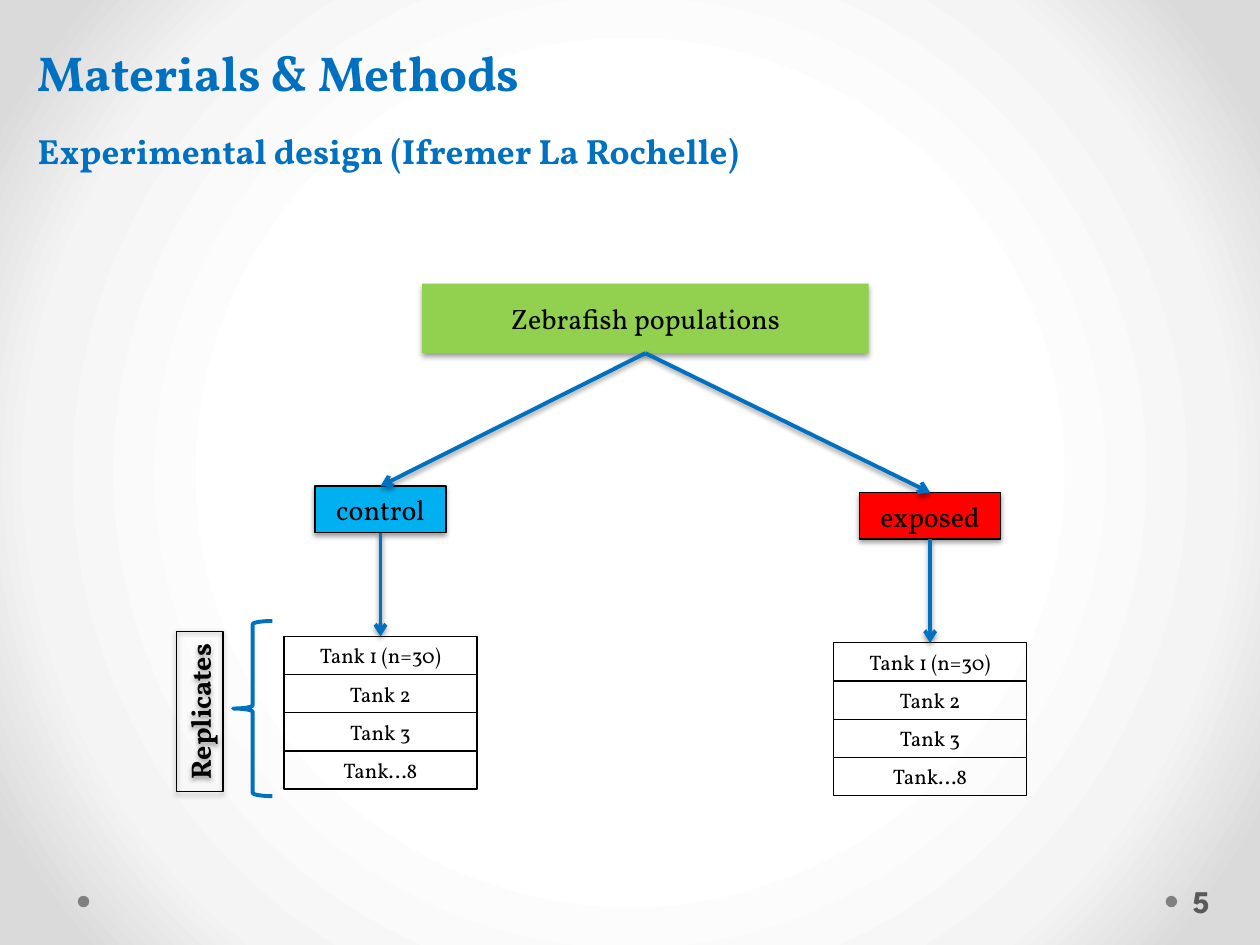
from lxml.etree import SubElement
from pptx import Presentation
from pptx.dml.color import RGBColor
from pptx.enum.shapes import MSO_CONNECTOR, MSO_SHAPE
from pptx.enum.text import MSO_ANCHOR, PP_ALIGN
from pptx.oxml import parse_xml
from pptx.oxml.ns import nsdecls, qn
from pptx.util import Cm, Pt

BLUE = "0070C0"
BLACK = "000000"


def color(hex_string):
    return RGBColor.from_string(hex_string)


def write(shape, text, size=16, font="Vollkorn", ink=BLACK, bold=False,
          align=PP_ALIGN.CENTER, anchor=MSO_ANCHOR.MIDDLE):
    frame = shape.text_frame
    frame.word_wrap = True
    frame.vertical_anchor = anchor
    paragraph = frame.paragraphs[0]
    paragraph.alignment = align
    run = paragraph.add_run()
    run.text = text
    run.font.name = font
    run.font.size = Pt(size)
    run.font.bold = bold
    run.font.color.rgb = color(ink)


class Diagram:
    """Draws styled elements on one slide; all lengths are centimetres."""

    def __init__(self, slide):
        self.slide = slide
        self.line_color = BLUE
        self.line_width = Pt(2.25)
        self.border_width = Pt(0.75)

    def background(self, stops):
        marks = "".join(
            f'<a:gs pos="{position * 1000}"><a:srgbClr val="{tone}"/></a:gs>'
            for position, tone in stops)
        gradient = parse_xml(
            f'<a:gradFill {nsdecls("a")} rotWithShape="1"><a:gsLst>{marks}</a:gsLst>'
            '<a:path path="circle"><a:fillToRect l="50000" t="50000" r="50000" b="50000"/>'
            '</a:path></a:gradFill>')
        self.slide.background.fill.solid()
        properties = self.slide.element.find(".//" + qn("p:bgPr"))
        properties.replace(properties[0], gradient)

    def shadow(self, effects):
        outer = SubElement(effects, qn("a:outerShdw"), blurRad=str(Pt(3.1)),
                           dist=str(Pt(1.6)), dir="5400000", rotWithShape="0")
        tone = SubElement(outer, qn("a:srgbClr"), val=BLACK)
        SubElement(tone, qn("a:alpha"), val="38000")

    def shape(self, kind, left, top, width, height, fill=None, line=None,
              line_width=None, shadow=False):
        shape = self.slide.shapes.add_shape(
            kind, Cm(left), Cm(top), Cm(width), Cm(height))
        if fill:
            shape.fill.solid()
            shape.fill.fore_color.rgb = color(fill)
        else:
            shape.fill.background()
        if line:
            shape.line.color.rgb = color(line)
            shape.line.width = line_width or self.border_width
        else:
            shape.line.fill.background()
        shape.shadow.inherit = False
        if shadow:
            self.shadow(shape.element.spPr.find(qn("a:effectLst")))
        return shape

    def box(self, text, left, top, width, height, fill=None, line=BLACK,
            shadow=True, **text_format):
        shape = self.shape(MSO_SHAPE.RECTANGLE, left, top, width, height,
                           fill, line, shadow=shadow)
        write(shape, text, **text_format)
        return shape

    def label(self, text, left, top, width, height, **text_format):
        shape = self.slide.shapes.add_textbox(
            Cm(left), Cm(top), Cm(width), Cm(height))
        write(shape, text, **text_format)
        return shape

    def arrow(self, start_x, start_y, end_x, end_y):
        connector = self.slide.shapes.add_connector(
            MSO_CONNECTOR.STRAIGHT, Cm(start_x), Cm(start_y), Cm(end_x), Cm(end_y))
        connector.line.color.rgb = color(self.line_color)
        connector.line.width = self.line_width
        properties = connector.element.spPr
        SubElement(properties.find(qn("a:ln")), qn("a:tailEnd"), type="arrow")
        self.shadow(SubElement(properties, qn("a:effectLst")))

    def brace(self, left, top, width, height):
        self.shape(MSO_SHAPE.LEFT_BRACE, left, top, width, height,
                   line=self.line_color, line_width=self.line_width)


def main():
    presentation = Presentation()
    presentation.slide_width = Cm(25.4)
    presentation.slide_height = Cm(19.05)
    diagram = Diagram(presentation.slides.add_slide(presentation.slide_layouts[6]))

    # Background and footer dots
    diagram.background([(50, "FFFFFF"), (76, "F4F4F4"), (92, "DADADA")])
    for left in (1.57, 23.5):
        diagram.shape(MSO_SHAPE.OVAL, left, 18.06, 0.23, 0.23, fill="808080")

    # Headings
    heading = {"ink": BLUE, "bold": True, "align": PP_ALIGN.LEFT,
               "anchor": MSO_ANCHOR.TOP}
    diagram.label("Materials & Methods", 0.51, 0.74, 12.22, 1.45, size=28, **heading)
    diagram.label("Experimental design (Ifremer La Rochelle)",
                  0.51, 2.49, 16.94, 1.12, size=20, **heading)

    # Source population
    diagram.box("Zebrafish populations", 8.51, 5.72, 9, 1.4, fill="92D050", line=None)

    # Groups, each with its stack of tanks
    tanks = ["Tank 1 (n=30)", "Tank 2", "Tank 3", "Tank…8"]
    groups = [("control", 7.67, 9.8, 2.64, "00B0F0"),
              ("exposed", 18.75, 9.93, 2.84, "FF0000")]
    group_height, tank_width, tank_height = 0.94, 3.89, 0.77
    for name, center, top, width, fill in groups:
        tanks_top = top + 3.03
        diagram.box(name, center - width / 2, top, width, group_height, fill=fill)
        for row, tank in enumerate(tanks):
            diagram.box(tank, center - tank_width / 2, tanks_top + row * tank_height,
                        tank_width, tank_height, shadow=False, size=12)
        diagram.arrow(13.01, 7.12, center, top)
        diagram.arrow(center, top + group_height, center, tanks_top)

    # Replicates bracket
    diagram.brace(4.7, 12.52, 0.79, 3.53)
    replicates = diagram.box("Replicates", 2.41, 13.87, 3.23, 0.94, bold=True)
    replicates.rotation = 270

    # Slide number
    number = diagram.label("5", 23.5, 17.65, 1.55, 1.02, size=18,
                           font="League Spartan", ink="595959", bold=True)
    number.text_frame.margin_left = Cm(0.13)

    presentation.save("out.pptx")


if __name__ == "__main__":
    main()
